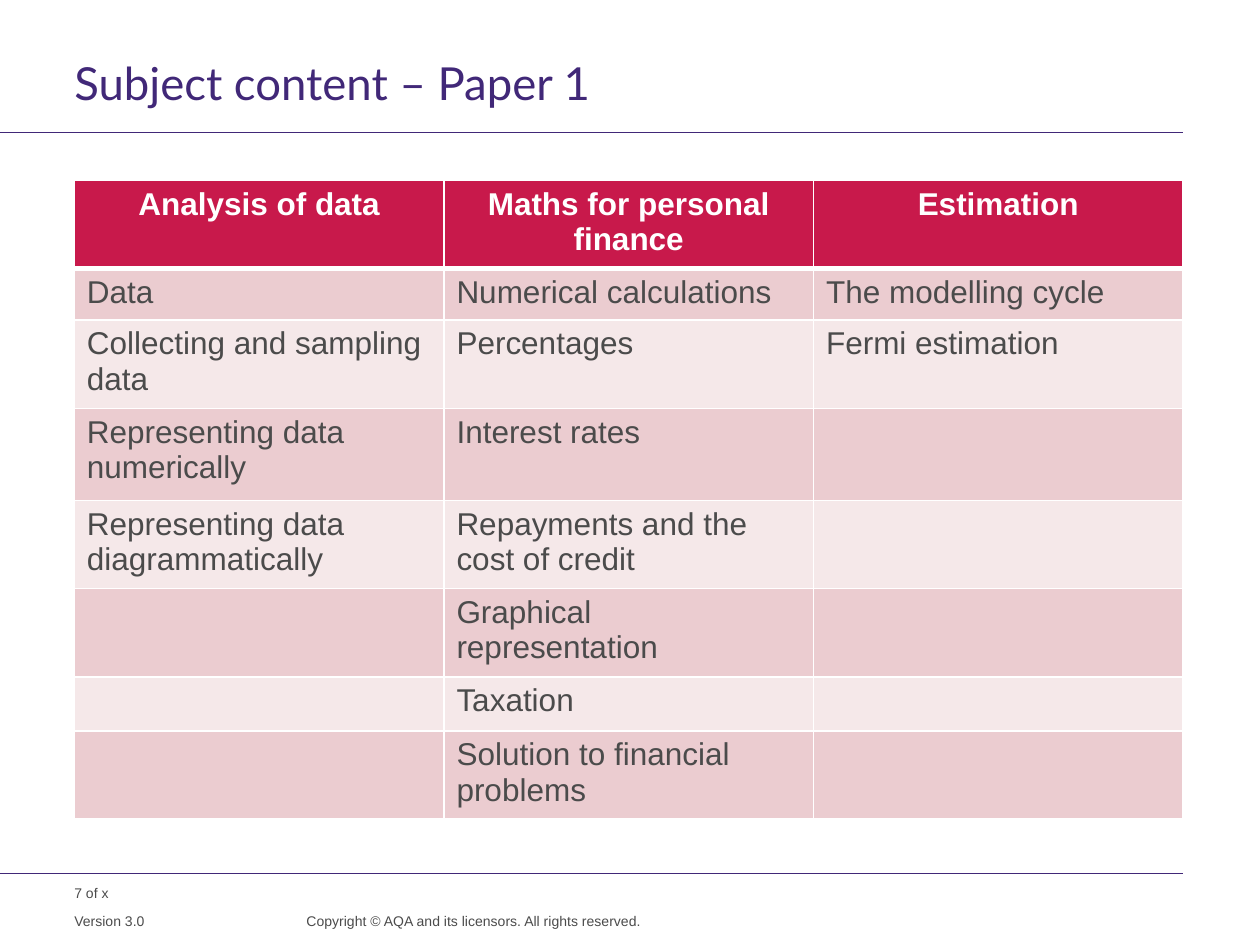
from pptx import Presentation
from pptx.dml.color import RGBColor
from pptx.enum.shapes import MSO_CONNECTOR
from pptx.enum.text import PP_ALIGN
from pptx.oxml import parse_xml
from pptx.oxml.ns import nsdecls, qn
from pptx.util import Inches, Pt

# Grid: 100 columns by 75 rows on a 10 x 7.5 inch slide
UNIT = Inches(0.1)
COLUMNS, ROWS = 100, 75
LEFT, WIDTH = 5.9, 88
RIGHT = LEFT + WIDTH

COLOURS = {
    "purple": "412878",
    "grey": "4B4B4B",
    "red": "C8194B",
    "band_dark": "EBCCD0",
    "band_light": "F5E8E9",
    "white": "FFFFFF",
}

HEADINGS = ("Analysis of data", "Maths for personal finance", "Estimation")
TOPICS = (
    ("Data", "Numerical calculations", "The modelling cycle"),
    ("Collecting and sampling data", "Percentages", "Fermi estimation"),
    ("Representing data numerically", "Interest rates", ""),
    ("Representing data diagrammatically", "Repayments and the cost of credit", ""),
    ("", "Graphical representation", ""),
    ("", "Taxation", ""),
    ("", "Solution to financial problems", ""),
)
ROW_HEIGHTS = (7, 4.1, 7, 7.3, 7, 7, 4.3, 7)


def grid(value):
    return round(value * UNIT)


def colour(name):
    return RGBColor.from_string(COLOURS[name])


class SlideBuilder:
    body_font = "Arial"
    title_font = "Lato"

    def __init__(self, presentation):
        self.slide = presentation.slides.add_slide(presentation.slide_layouts[6])

    def style(self, paragraph, size, ink, font=None, bold=False, align=PP_ALIGN.LEFT):
        paragraph.alignment = align
        for run in paragraph.runs:
            run.font.name = font or self.body_font
            run.font.size = Pt(size)
            run.font.bold = bold
            run.font.color.rgb = colour(ink)

    def rule(self, row):
        line = self.slide.shapes.add_connector(
            MSO_CONNECTOR.STRAIGHT, 0, grid(row), grid(RIGHT), grid(row))
        line.line.color.rgb = colour("purple")
        line.line.width = Pt(0.6)
        line._element.spPr.append(parse_xml(f"<a:effectLst {nsdecls('a')}/>"))

    def text(self, content, left, top, width, height, size=8, ink="grey",
             spacing=None, **style):
        box = self.slide.shapes.add_textbox(*map(grid, (left, top, width, height)))
        frame = box.text_frame
        frame.word_wrap = True
        frame.margin_left = frame.margin_top = frame.margin_right = frame.margin_bottom = 0
        frame.text = content
        paragraph = frame.paragraphs[0]
        if spacing:
            paragraph.line_spacing = Pt(spacing)
        self.style(paragraph, size, ink, **style)

    def borders(self, cell, bottom):
        properties = cell._tc.get_or_add_tcPr()
        fill = properties.find(qn("a:solidFill"))
        for side, points in (("L", 1), ("R", 1), ("T", 1), ("B", bottom)):
            fill.addprevious(parse_xml(
                f'<a:ln{side} {nsdecls("a")} w="{Pt(points)}"><a:solidFill>'
                f'<a:srgbClr val="{COLOURS["white"]}"/></a:solidFill></a:ln{side}>'))

    def table(self, rows, heights, left, top, width):
        count = len(rows[0])
        table = self.slide.shapes.add_table(
            len(rows), count, *map(grid, (left, top, width, sum(heights)))).table
        for column in table.columns:
            column.width = grid(width / count)
        for index, (values, height) in enumerate(zip(rows, heights)):
            header = index == 0
            band = "red" if header else "band_dark" if index % 2 else "band_light"
            table.rows[index].height = grid(height)
            for cell, value in zip(table.rows[index].cells, values):
                cell.fill.solid()
                cell.fill.fore_color.rgb = colour(band)
                # The header's thick lower edge is also the first row's top edge
                self.borders(cell, bottom=3 if header else 1)
                if index == 1:
                    cell._tc.tcPr.find(qn("a:lnT")).set("w", str(Pt(3)))
                if value:
                    cell.text_frame.text = value
                    self.style(cell.text_frame.paragraphs[0], 18,
                               "white" if header else "grey", bold=header,
                               align=PP_ALIGN.CENTER if header else PP_ALIGN.LEFT)


def main():
    presentation = Presentation()
    presentation.slide_width = COLUMNS * UNIT
    presentation.slide_height = ROWS * UNIT
    builder = SlideBuilder(presentation)

    # Title between the margins, with rules above and below the content
    builder.rule(10.5)
    builder.rule(69.3)
    builder.text("Subject content – Paper 1", LEFT, 4.8, WIDTH, 4.7, size=26,
                 ink="purple", spacing=28, font=builder.title_font)

    # Topics by subject area
    builder.table((HEADINGS, *TOPICS), ROW_HEIGHTS, LEFT, 14.3, WIDTH)

    # Footer
    builder.text("7 of x", LEFT, 70.2, 15.7, 1.4)
    builder.text("Version 3.0", LEFT, 72.4, 14.7, 1.3, spacing=10)
    builder.text("Copyright © AQA and its licensors. All rights reserved.",
                 21.6, 72.4, 29.3, 2.6, spacing=10, align=PP_ALIGN.RIGHT)

    presentation.save("out.pptx")


if __name__ == "__main__":
    main()
